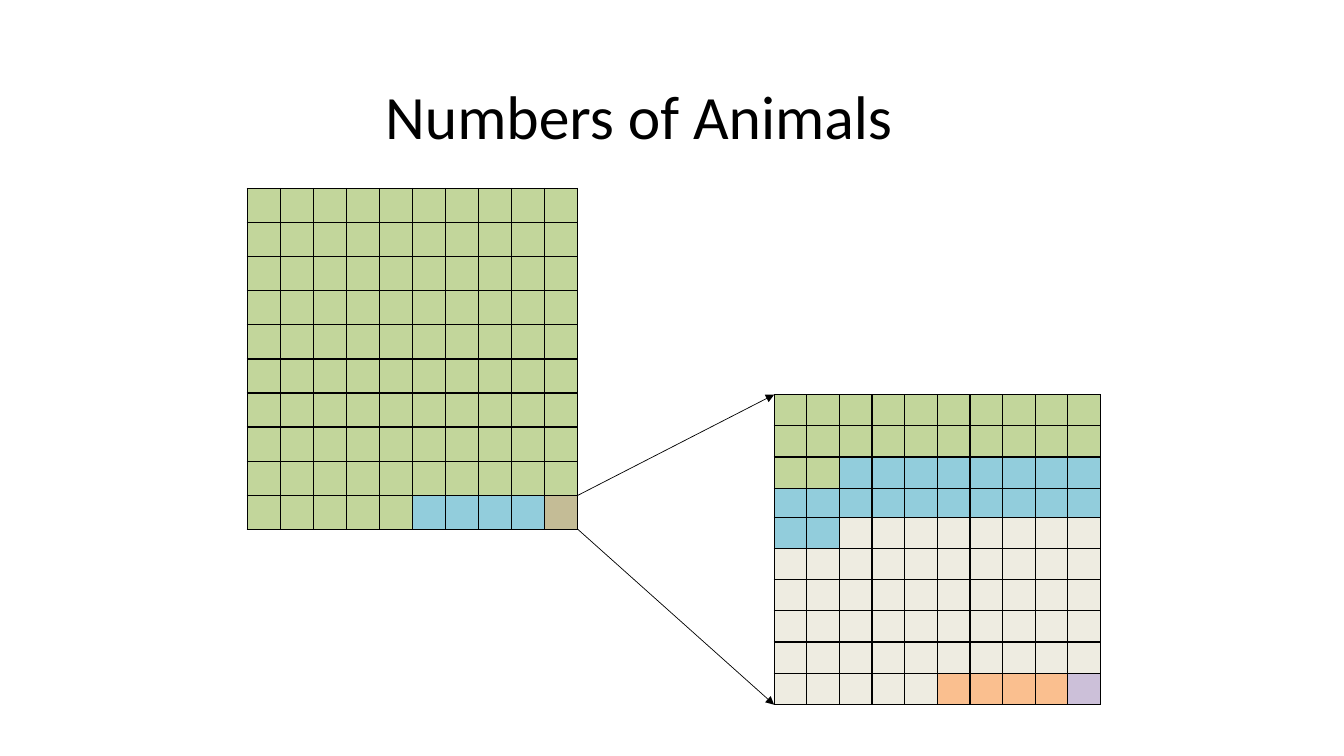
from dataclasses import dataclass
from itertools import chain, repeat

from lxml.etree import SubElement as Sub
from pptx import Presentation as Deck
from pptx.dml.color import RGBColor as Rgb
from pptx.enum.shapes import MSO_CONNECTOR as Link
from pptx.enum.text import MSO_ANCHOR as Anchor, PP_ALIGN as Align
from pptx.oxml.ns import qn
from pptx.util import Inches, Pt


@dataclass(frozen=True)
class Theme:
    font: str = "Calibri"
    head: int = 44
    tiny: int = 6
    rule: float = 1
    thin: float = 0.5
    ink: str = "000000"
    green: str = "C2D69B"
    blue: str = "92CDDC"
    tan: str = "C4BC96"
    cream: str = "EEECE1"
    peach: str = "FABF8F"
    lilac: str = "CCC0D9"


class Board:
    """Places elements on a grid of 100 columns and 100 rows."""

    def __init__(self, deck, theme):
        self.theme = theme
        self.wide, self.high = deck.slide_width, deck.slide_height
        self.slide = deck.slides.add_slide(deck.slide_layouts[5])

    def x(self, cols):
        return round(self.wide * cols / 100)

    def y(self, rows):
        return round(self.high * rows / 100)

    def title(self, text, left, top, width, height):
        box = self.slide.shapes.title
        box.left, box.top = self.x(left), self.y(top)
        box.width, box.height = self.x(width), self.y(height)
        frame = box.text_frame
        frame.text = text
        frame.vertical_anchor = Anchor.MIDDLE
        par = frame.paragraphs[0]
        par.alignment = Align.CENTER
        font = par.runs[0].font
        font.name, font.size = self.theme.font, Pt(self.theme.head)
        font.color.rgb = Rgb.from_string(self.theme.ink)

    def square(self, left, top, col, rows, counts):
        """Draws a ten-column table, filled row by row from colour counts."""
        width, height = self.x(col * 10), self.y(sum(rows))
        table = self.slide.shapes.add_table(
            len(rows), 10, self.x(left), self.y(top), width, height).table
        table.first_row = table.horz_banding = False
        for item in table.columns:
            item.width = self.x(col)
        for item, row in zip(table.rows, rows):
            item.height = self.y(row)
        fills = chain.from_iterable(repeat(hue, n) for hue, n in counts)
        for cell, hue in zip(table.iter_cells(), fills):
            self.paint(cell, hue)

    def paint(self, cell, hue):
        cell.margin_left = cell.margin_right = 0
        cell.margin_top = cell.margin_bottom = 0
        # A small empty line keeps the row at its set height
        par = cell.text_frame.paragraphs[0]
        Sub(par._p, qn("a:endParaRPr"), sz=str(self.theme.tiny * 100))
        # Borders come before the fill
        props = cell._tc.get_or_add_tcPr()
        for side in ("lnL", "lnR", "lnT", "lnB"):
            edge = Sub(props, qn(f"a:{side}"), w=str(Pt(self.theme.rule)))
            Sub(Sub(edge, qn("a:solidFill")), qn("a:srgbClr"),
                val=self.theme.ink)
        cell.fill.solid()
        cell.fill.fore_color.rgb = Rgb.from_string(hue)

    def arrow(self, start, end):
        line = self.slide.shapes.add_connector(
            Link.STRAIGHT, self.x(start[0]), self.y(start[1]),
            self.x(end[0]), self.y(end[1]))
        line.line.color.rgb = Rgb.from_string(self.theme.ink)
        line.line.width = Pt(self.theme.thin)
        Sub(line.line._get_or_add_ln(), qn("a:tailEnd"), type="triangle")
        Sub(line._element.spPr, qn("a:effectLst"))


def main():
    deck = Deck()
    deck.slide_width, deck.slide_height = Inches(13.33), Inches(7.5)
    hue = Theme()
    board = Board(deck, hue)

    # Title
    board.title("Numbers of Animals", 27.15, 9.6, 40.8, 11.2)

    # All animals
    left, top, col = 18.4, 24.93, 2.46
    rows = [4.51] * 10
    board.square(left, top, col, rows,
                 [(hue.green, 95), (hue.blue, 4), (hue.tan, 1)])

    # The last cell, split into a hundred parts
    zoom, peak = 57.6, 52.2
    parts = [4.13] * 3 + [3.85] + [4.13] * 6
    board.square(zoom, peak, 2.43, parts,
                 [(hue.green, 22), (hue.blue, 20), (hue.cream, 53),
                  (hue.peach, 4), (hue.lilac, 1)])

    # Arrows from the last cell to the corners of the second square
    side = left + 10 * col
    board.arrow((side, top + sum(rows[:-1])), (zoom, peak))
    board.arrow((side, top + sum(rows)), (zoom, peak + sum(parts)))

    deck.save("out.pptx")


if __name__ == "__main__":
    main()
